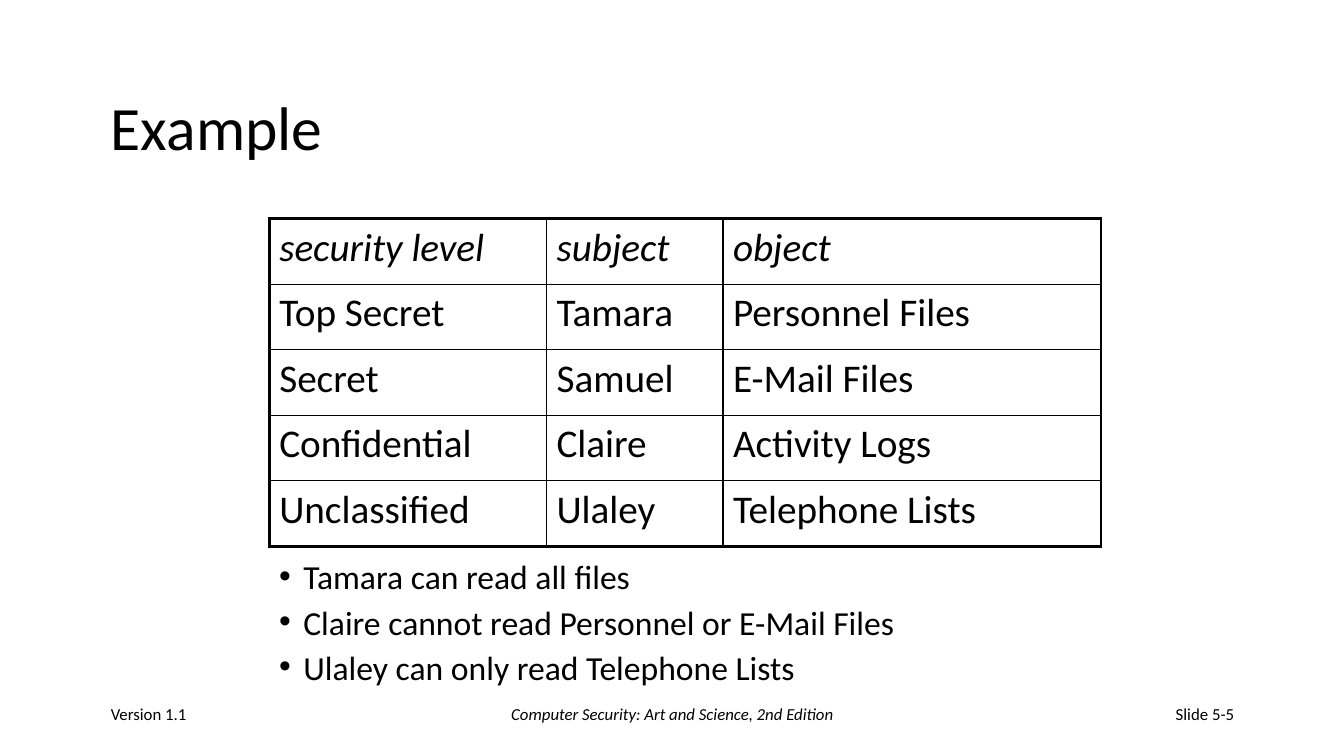
import pptx
import pptx.util
import pptx.dml.color
import pptx.enum.text
import pptx.oxml.ns
import lxml.etree

COLORS = {"ink": "000000", "paper": "FFFFFF"}
FONT = "Calibri"
Inches, Pt = pptx.util.Inches, pptx.util.Pt
ALIGN = pptx.enum.text.PP_ALIGN
MIDDLE = pptx.enum.text.MSO_ANCHOR.MIDDLE
qn = pptx.oxml.ns.qn


def style(paragraph, size, italic=False, alignment=ALIGN.LEFT):
    paragraph.alignment = alignment
    paragraph.font.name = FONT
    paragraph.font.size = Pt(size)
    paragraph.font.italic = italic
    paragraph.font.color.rgb = pptx.dml.color.RGBColor.from_string(COLORS["ink"])


def add_border(cell, side, width):
    properties = cell._tc.get_or_add_tcPr()
    line = lxml.etree.SubElement(properties, qn(f"a:ln{side}"), w=str(Pt(width)))
    fill = lxml.etree.SubElement(line, qn("a:solidFill"))
    lxml.etree.SubElement(fill, qn("a:srgbClr"), val=COLORS["ink"])


presentation = pptx.Presentation()
presentation.slide_width = Inches(13.33)
presentation.slide_height = Inches(7.5)
slide = presentation.slides.add_slide(presentation.slide_layouts[5])
slide.background.fill.solid()
slide.background.fill.fore_color.rgb = pptx.dml.color.RGBColor.from_string(COLORS["paper"])

title = slide.shapes.title
title.left, title.top = Inches(1), Inches(0.67)
title.width, title.height = Inches(11.33), Inches(1.25)
title.text_frame.text = "Example"
title.text_frame.auto_size = pptx.enum.text.MSO_AUTO_SIZE.NONE
title.text_frame.vertical_anchor = MIDDLE
title.text_frame.paragraphs[0].line_spacing = 0.9
style(title.text_frame.paragraphs[0], 44)

levels = [
    ["security level", "subject", "object"],
    ["Top Secret", "Tamara", "Personnel Files"],
    ["Secret", "Samuel", "E-Mail Files"],
    ["Confidential", "Claire", "Activity Logs"],
    ["Unclassified", "Ulaley", "Telephone Lists"],
]
column_widths = [2.75, 1.75, 3.75]
row_height = 0.65
last_row, last_column = len(levels) - 1, len(column_widths) - 1
table = slide.shapes.add_table(
    len(levels), len(column_widths), Inches(2.67), Inches(2.17),
    Inches(sum(column_widths)), Inches(row_height * len(levels)),
).table
table.first_row = False
table.horz_banding = False
for column, width in zip(table.columns, column_widths):
    column.width = Inches(width)
for row_index, texts in enumerate(levels):
    table.rows[row_index].height = Inches(row_height)
    for column_index, text in enumerate(texts):
        cell = table.cell(row_index, column_index)
        cell.text = text
        style(cell.text_frame.paragraphs[0], 28, italic=row_index == 0)
        outer_sides = {
            "L": column_index == 0,
            "R": column_index == last_column,
            "T": row_index == 0,
            "B": row_index == last_row,
        }
        for side, is_outer in outer_sides.items():
            add_border(cell, side, 2.25 if is_outer else 1)
        cell.fill.background()

conclusions = [
    "Tamara can read all files",
    "Claire cannot read Personnel or E-Mail Files",
    "Ulaley can only read Telephone Lists",
]
notes_box = slide.shapes.add_textbox(Inches(2.67), Inches(5.58), Inches(8.23), Inches(1.38))
notes_box.text_frame.word_wrap = True
notes_box.text_frame.text = "\n".join(conclusions)
for index, paragraph in enumerate(notes_box.text_frame.paragraphs):
    properties = paragraph._p.get_or_add_pPr()
    properties.set("marL", str(Inches(0.24)))
    properties.set("indent", str(-Inches(0.24)))
    lxml.etree.SubElement(properties, qn("a:buFont"), typeface="Arial")
    lxml.etree.SubElement(properties, qn("a:buChar"), char="•")
    paragraph.line_spacing = 0.7
    paragraph.space_before = Pt(12 if index else 0)
    style(paragraph, 24)

footers = [
    ("Version 1.1", 1, 2.78, False, ALIGN.LEFT),
    ("Computer Security: Art and Science, 2nd Edition", 4.56, 4.22, True, ALIGN.CENTER),
    ("Slide 5-5", 9.56, 2.78, False, ALIGN.RIGHT),
]
for text, left, width, italic, alignment in footers:
    footer = slide.shapes.add_textbox(Inches(left), Inches(6.83), Inches(width), Inches(0.5))
    footer.text_frame.word_wrap = True
    footer.text_frame.vertical_anchor = MIDDLE
    footer.text_frame.text = text
    style(footer.text_frame.paragraphs[0], 12, italic, alignment)

presentation.save("out.pptx")
